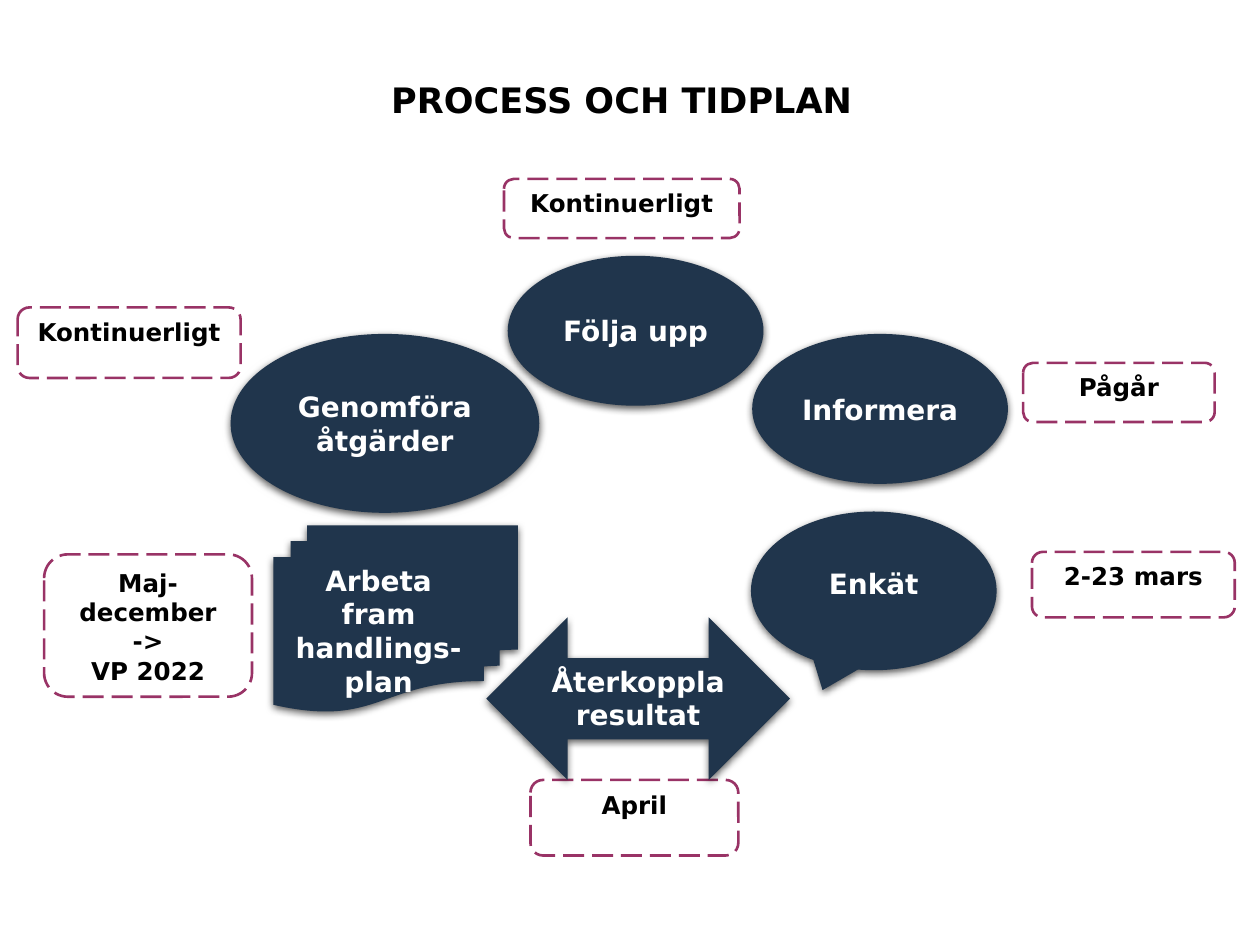
from lxml.etree import SubElement
from pptx import Presentation
from pptx.dml.color import RGBColor
from pptx.enum.dml import MSO_LINE
from pptx.enum.shapes import MSO_SHAPE as Shape
from pptx.enum.text import MSO_ANCHOR as Anchor, PP_ALIGN as Align
from pptx.oxml.ns import qn
from pptx.util import Inches, Pt

COLUMNS, ROWS = 100, 75
COLORS = {"navy": "20354C", "plum": "993366", "white": "FFFFFF", "black": "000000"}

# Clockwise through the process: step, its shape and place, then its date and place.
# Places are left, top, width and height in columns and rows.
STEPS = [
    ("Informera", Shape.OVAL, (59.7, 26.5, 20.3, 11.9),
     "Pågår", (81.2, 28.8, 15.2, 4.7)),
    ("Enkät", Shape.OVAL_CALLOUT, (59.6, 40.6, 19.5, 12.6),
     "2-23 mars", (81.9, 43.8, 16.1, 5.2)),
    ("Arbeta fram handlings-plan", Shape.FLOWCHART_MULTIDOCUMENT, (21.7, 41.7, 19.4, 14.8),
     "Maj- december\n->\nVP 2022", (3.5, 44, 16.5, 11.3)),
    ("Återkoppla resultat", Shape.LEFT_RIGHT_ARROW, (38.6, 49, 24.1, 12.9),
     "April", (42.1, 61.9, 16.5, 6)),
    ("Genomföra åtgärder", Shape.OVAL, (18.3, 26.5, 24.5, 14.2),
     "Kontinuerligt", (1.4, 24.4, 17.7, 5.6)),
    ("Följa upp", Shape.OVAL, (40.3, 20.3, 20.3, 11.9),
     "Kontinuerligt", (40, 14.2, 18.7, 4.7)),
]


class ProcessSlide:
    font = "DejaVu Sans"

    def __init__(self, deck):
        self.slide = deck.slides.add_slide(deck.slide_layouts[5])
        self.column = deck.slide_width / COLUMNS
        self.row = deck.slide_height / ROWS

    def color(self, name):
        return RGBColor.from_string(COLORS[name])

    def place(self, box):
        left, top, width, height = box
        return (round(left * self.column), round(top * self.row),
                round(width * self.column), round(height * self.row))

    def set_text(self, frame, text, size, color, anchor, margins):
        frame.text = text
        frame.word_wrap = True
        frame.vertical_anchor = anchor
        side, top, bottom = map(Inches, margins)
        frame.margin_left = frame.margin_right = side
        frame.margin_top, frame.margin_bottom = top, bottom
        for paragraph in frame.paragraphs:
            paragraph.alignment = Align.CENTER
            for run in paragraph.runs:
                run.font.name, run.font.size, run.font.bold = self.font, Pt(size), True
                run.font.color.rgb = self.color(color)

    def title(self, text, box):
        heading = self.slide.shapes.title
        heading.left, heading.top, heading.width, heading.height = self.place(box)
        self.set_text(heading.text_frame, text, 20, "black", Anchor.MIDDLE, (0, 0, 0))

    def filled(self, kind, box, fill):
        shape = self.slide.shapes.add_shape(kind, *self.place(box))
        shape.shadow.inherit = False
        shape.fill.solid()
        shape.fill.fore_color.rgb = self.color(fill)
        return shape

    def cast_shadow(self, shape):
        """Give the shape a soft shadow that falls straight down."""
        effects = shape._element.spPr.find(qn("a:effectLst"))
        shadow = SubElement(effects, qn("a:outerShdw"), blurRad=str(Pt(4.5)),
                            dist=str(Pt(1.5)), dir="5400000", rotWithShape="0")
        tint = SubElement(shadow, qn("a:srgbClr"), val=COLORS["black"])
        SubElement(tint, qn("a:alpha"), val="63000")

    def step(self, text, kind, box):
        shape = self.filled(kind, box, "navy")
        shape.line.fill.background()
        self.cast_shadow(shape)
        anchor, margins = Anchor.TOP, (0.1, 0.05, 0.05)
        if kind == Shape.OVAL:
            anchor, margins = Anchor.MIDDLE, (0.07, 0.04, 0.04)
        elif kind == Shape.OVAL_CALLOUT:
            margins = (0.1, 0.25, 0.05)
        self.set_text(shape.text_frame, text, 16, "white", anchor, margins)

    def date(self, text, box):
        shape = self.filled(Shape.ROUNDED_RECTANGLE, box, "white")
        shape.line.color.rgb = self.color("plum")
        shape.line.width = Pt(1.5)
        shape.line.dash_style = MSO_LINE.LONG_DASH
        self.set_text(shape.text_frame, text, 14, "black", Anchor.TOP, (0.1, 0.05, 0.05))


def main():
    deck = Presentation()
    deck.slide_width, deck.slide_height = Inches(10), Inches(7.5)
    page = ProcessSlide(deck)
    page.title("PROCESS OCH TIDPLAN", (13, 2, 72.7, 11.8))
    for step, kind, step_box, date, date_box in STEPS:
        page.date(date, date_box)
        page.step(step, kind, step_box)
    deck.save("out.pptx")


if __name__ == "__main__":
    main()
